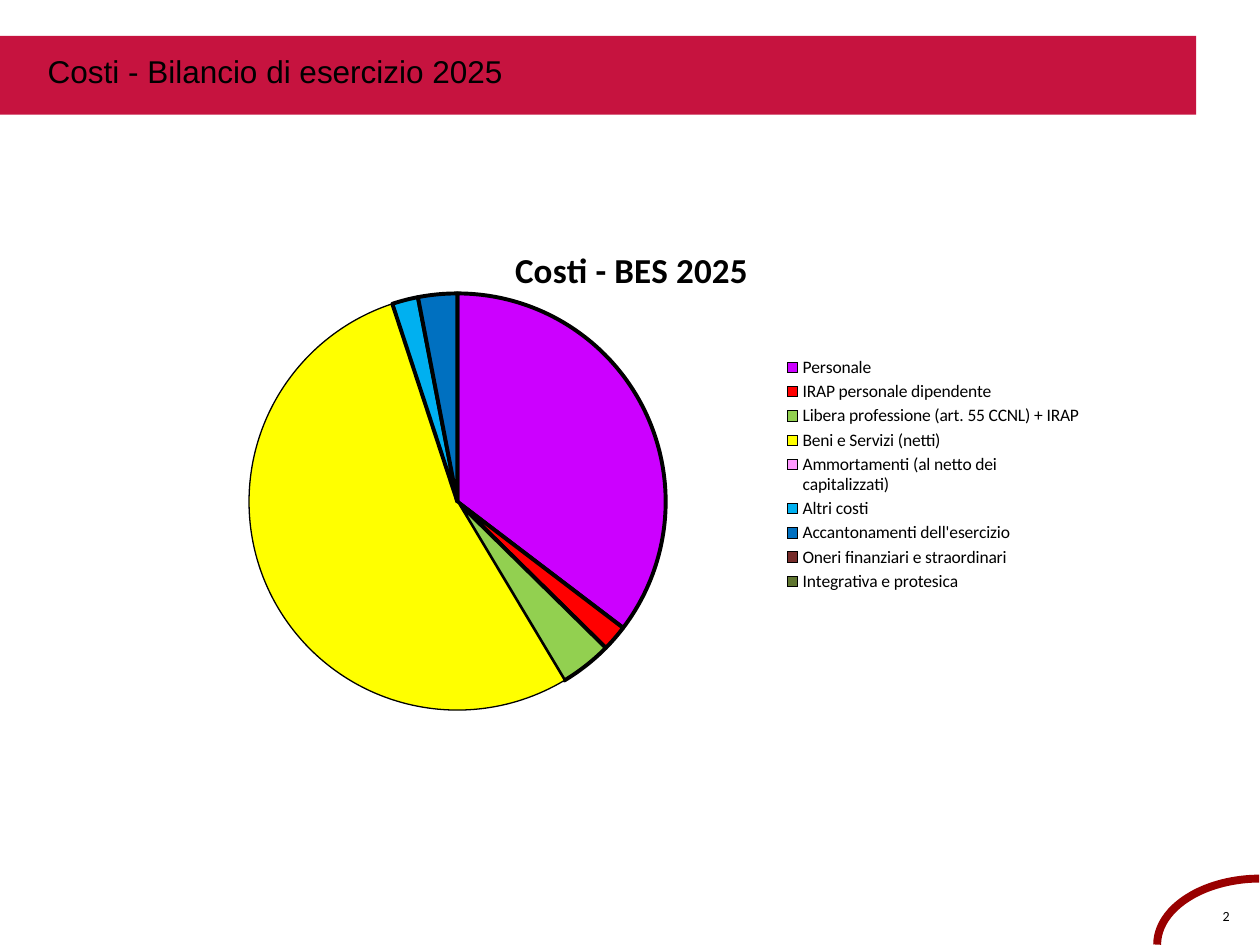
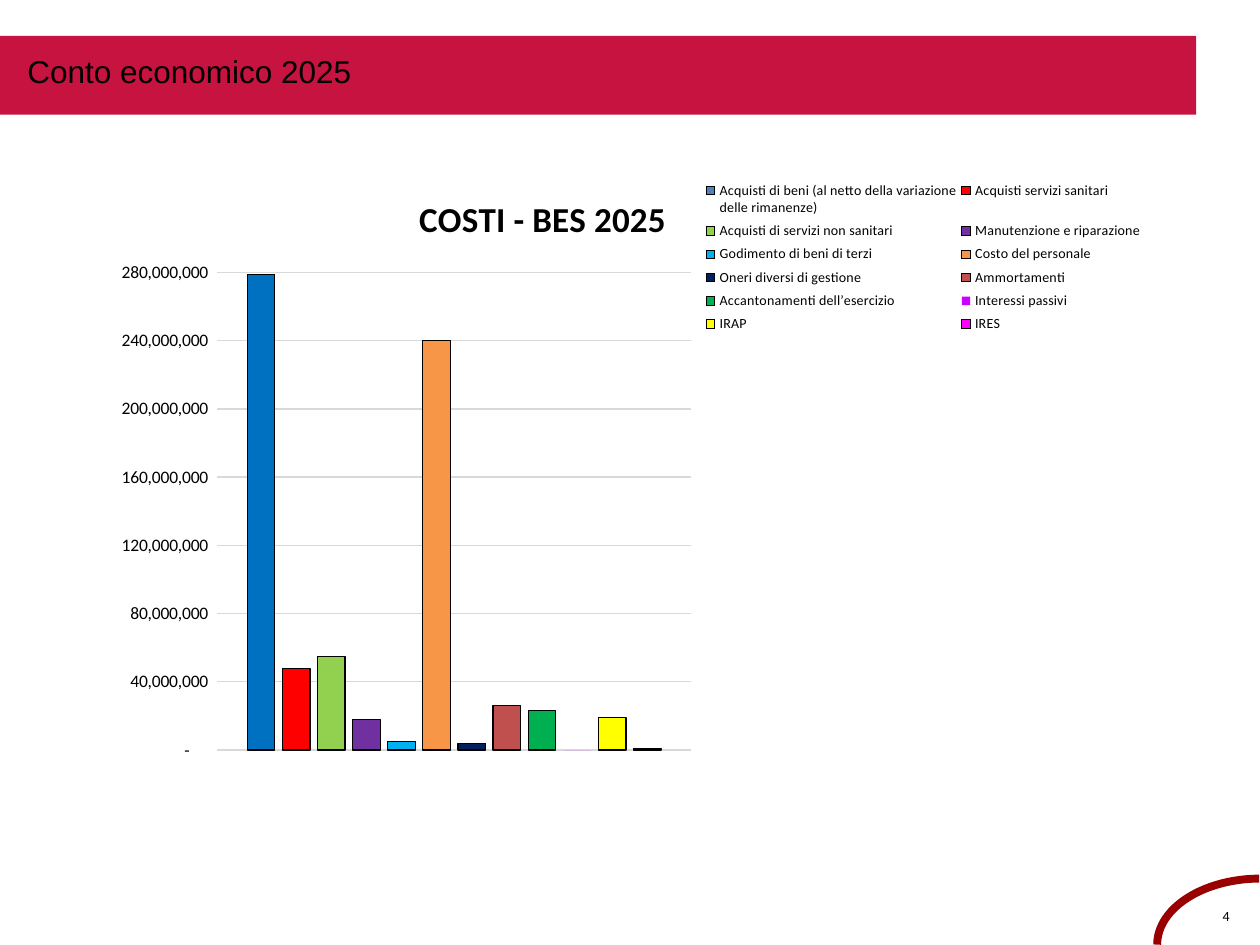
from dataclasses import dataclass

from lxml import etree
from pptx import Presentation
from pptx.chart.data import CategoryChartData
from pptx.dml.color import RGBColor
from pptx.enum.chart import XL_CHART_TYPE, XL_LEGEND_POSITION, XL_TICK_MARK
from pptx.enum.shapes import MSO_SHAPE
from pptx.enum.text import MSO_ANCHOR, PP_ALIGN
from pptx.oxml.ns import qn
from pptx.util import Pt

PIE = XL_CHART_TYPE.PIE
COLUMN = XL_CHART_TYPE.COLUMN_CLUSTERED
RIGHT = XL_LEGEND_POSITION.RIGHT
CORNER = XL_LEGEND_POSITION.CORNER
NO_TICK = XL_TICK_MARK.NONE
LEFT, CENTER = PP_ALIGN.LEFT, PP_ALIGN.CENTER
TOP = MSO_ANCHOR.TOP
RECT, ARC = MSO_SHAPE.RECTANGLE, MSO_SHAPE.ARC


@dataclass(frozen=True)
class Theme:
    band: str = "C6133F"
    arc: str = "990000"
    text: str = "000000"
    grid: str = "D9D9D9"
    head_font: str = "Arial"
    font: str = "Calibri"
    head: int = 18
    title: int = 20
    label: int = 10
    small: int = 8
    thin: float = 0.75
    thick: float = 2.25
    curve: float = 4.5


THEME = Theme()
MILLION = 1_000_000
AMOUNT = '_ * #,##0_ ;_ * \\-#,##0_ ;_ * "-"??_ ;_ '

# name, share of costs in percent, colour
SHARES = [
    ("Personale", 35, "CC00FF"),
    ("IRAP personale dipendente", 2, "FF0000"),
    ("Libera professione (art. 55 CCNL) + IRAP", 4, "92D050"),
    ("Beni e Servizi (netti)", 53, "FFFF00"),
    ("Ammortamenti (al netto dei\ncapitalizzati)", 0, "FF99FF"),
    ("Altri costi", 2, "00B0F0"),
    ("Accantonamenti dell'esercizio", 3, "0070C0"),
    ("Oneri finanziari e straordinari", 0, "772C2A"),
    ("Integrativa e protesica", 0, "5F7530"),
]
WIDEST = "Beni e Servizi (netti)"

# name, cost in millions, colour
COSTS = [
    ("Acquisti di beni (al netto della variazione\ndelle rimanenze)", 279, "4F81BD"),
    ("Acquisti servizi sanitari", 48, "FF0000"),
    ("Acquisti di servizi non sanitari", 55, "92D050"),
    ("Manutenzione e riparazione", 18, "7030A0"),
    ("Godimento di beni di terzi", 5, "00B0F0"),
    ("Costo del personale", 240, "F79646"),
    ("Oneri diversi di gestione", 4, "002060"),
    ("Ammortamenti", 26, "C0504D"),
    ("Accantonamenti dell’esercizio", 23, "00B050"),
    ("Interessi passivi", 0, "CC00FF"),
    ("IRAP", 19, "FFFF00"),
    ("IRES", 1, "FF00FF"),
]
GOODS_BAR = "0070C0"


def points(box):
    return [Pt(n) for n in box]


def paint(fill, color):
    fill.solid()
    fill.fore_color.rgb = RGBColor.from_string(color)


def stroke(line, color, width):
    paint(line.fill, color)
    line.width = Pt(width)


def style(font, name, size, bold=False):
    font.name, font.size, font.bold = name, Pt(size), bold
    font.color.rgb = RGBColor.from_string(THEME.text)


def write(frame, text, align, name, size, bold=False):
    para = frame.paragraphs[0]
    para.alignment = align
    run = para.add_run()
    run.text = text
    style(run.font, name, size, bold)


def add_band(slide, box):
    band = slide.shapes.add_shape(RECT, *points(box))
    band.shadow.inherit = False
    paint(band.fill, THEME.band)
    band.line.fill.background()


def add_head(slide, text, box):
    """Fill the title placeholder and bring it in front of the band."""
    head = slide.shapes.title
    head.left, head.top, head.width, head.height = points(box)
    head.text_frame.vertical_anchor = TOP
    write(head.text_frame, text, LEFT, THEME.head_font, THEME.head)
    head.element.getparent().append(head.element)


def add_corner(slide, page, box):
    """Draw the quarter arc in the box and the page number inside it."""
    left, top, width, height = box
    shift = (width - height) / 2  # the arc is turned a quarter to the left
    arc = slide.shapes.add_shape(
        ARC, *points((left + shift, top - shift, height, width)))
    arc.rotation = 270
    arc.adjustments[0], arc.adjustments[1] = 162, 215.34
    arc.shadow.inherit = False
    arc.fill.background()
    stroke(arc.line, THEME.arc, THEME.curve)

    label = slide.shapes.add_textbox(*points((left + 28, top + 14.5, 23, 11.5)))
    frame = label.text_frame
    frame.margin_left = frame.margin_right = frame.margin_bottom = 0
    frame.margin_top = Pt(2)
    frame.word_wrap = True
    write(frame, str(page), CENTER, THEME.font, THEME.small)


def pin(chart, part, **place):
    """Fix a chart part at fractions of the chart's size."""
    node = chart.element.xpath("c:chart/c:" + part)[0]
    for old in node.findall(qn("c:layout")):
        node.remove(old)
    layout = etree.Element(qn("c:layout"))
    over = node.find(qn("c:overlay"))
    if over is None:
        node.insert(0, layout)
    else:
        over.addprevious(layout)
    manual = etree.SubElement(layout, qn("c:manualLayout"))
    if part == "plotArea":
        etree.SubElement(manual, qn("c:layoutTarget")).set("val", "inner")
    for key in ("x", "y"):
        etree.SubElement(manual, qn(f"c:{key}Mode")).set("val", "edge")
    for key, value in place.items():
        etree.SubElement(manual, qn("c:" + key)).set("val", str(value))


def add_graph(slide, kind, data, title, side, size, box):
    """Add a chart whose legend is at the given side and of the given size."""
    chart = slide.shapes.add_chart(kind, *points(box), data).chart
    style(chart.font, THEME.font, THEME.label)
    chart.has_title = True
    write(chart.chart_title.text_frame, title, CENTER, THEME.font, THEME.title, True)
    chart.has_legend = True
    chart.legend.position = side
    chart.legend.include_in_layout = False
    style(chart.legend.font, THEME.font, size)
    return chart


def add_pie(slide, box):
    data = CategoryChartData()
    data.categories = [name for name, _, _ in SHARES]
    data.add_series("Series 1", [share for _, share, _ in SHARES])
    chart = add_graph(slide, PIE, data, "Costi - BES 2025", RIGHT, THEME.label, box)
    chart.plots[0].vary_by_categories = True
    pin(chart, "title", x=0.37, y=0.03)
    pin(chart, "plotArea", x=0, y=0.14, w=0.63, h=0.84)
    pin(chart, "legend", x=0.66, y=0.26, w=0.33, h=0.49)

    series = chart.plots[0].series[0]
    stroke(series.format.line, THEME.text, THEME.thin)
    for i, (name, _, color) in enumerate(SHARES):
        look = series.points[i].format
        paint(look.fill, color)
        stroke(look.line, THEME.text, THEME.thin if name == WIDEST else THEME.thick)


def add_bars(slide, box):
    data = CategoryChartData()
    data.categories = ["1"]
    for name, cost, _ in COSTS:
        data.add_series(name, [cost * MILLION])
    chart = add_graph(slide, COLUMN, data, "COSTI - BES 2025", CORNER, THEME.small, box)
    pin(chart, "title", x=0.29, y=0.03)
    pin(chart, "plotArea", x=0.1, y=0.17, w=0.46, h=0.79)
    pin(chart, "legend", x=0.57, y=0.01, w=0.43, h=0.27)

    plot = chart.plots[0]
    plot.vary_by_categories = False
    plot.gap_width, plot.overlap = 219, -27
    for series, (_, cost, color) in zip(plot.series, COSTS):
        series.invert_if_negative = False
        paint(series.format.fill, color)
        if cost:
            stroke(series.format.line, THEME.text, THEME.thin)
        else:
            series.format.line.fill.background()
    goods = plot.series[0].points[0].format
    paint(goods.fill, GOODS_BAR)
    stroke(goods.line, THEME.text, THEME.thin)

    chart.category_axis.visible = False
    axis = chart.value_axis
    axis.minimum_scale, axis.maximum_scale = 0, 280 * MILLION
    axis.major_unit = 40 * MILLION
    axis.major_tick_mark = axis.minor_tick_mark = NO_TICK
    axis.format.line.fill.background()
    stroke(axis.major_gridlines.format.line, THEME.grid, THEME.thin)
    labels = axis.tick_labels
    labels.number_format, labels.number_format_is_linked = AMOUNT, False
    style(labels.font, THEME.font, THEME.label)


def add_page(deck, text, left, page):
    """Add a slide with the shared band, title and corner."""
    slide = deck.slides.add_slide(deck.slide_layouts[5])
    add_corner(slide, page, (661.25, 502, 118, 75.5))
    add_band(slide, (0, 20.5, 683.5, 45))
    add_head(slide, text, (left, 26, 468 - left, 51))
    return slide


def main():
    deck = Presentation()
    deck.slide_width, deck.slide_height = Pt(720), Pt(540)
    add_pie(add_page(deck, "Costi - Bilancio di esercizio 2025", 20, 2),
            (93.5, 128, 533, 283.5))
    add_bars(add_page(deck, "Conto economico 2025", 8.5, 4),
             (65, 97, 589.5, 345.5))
    deck.save("out.pptx")


if __name__ == "__main__":
    main()
